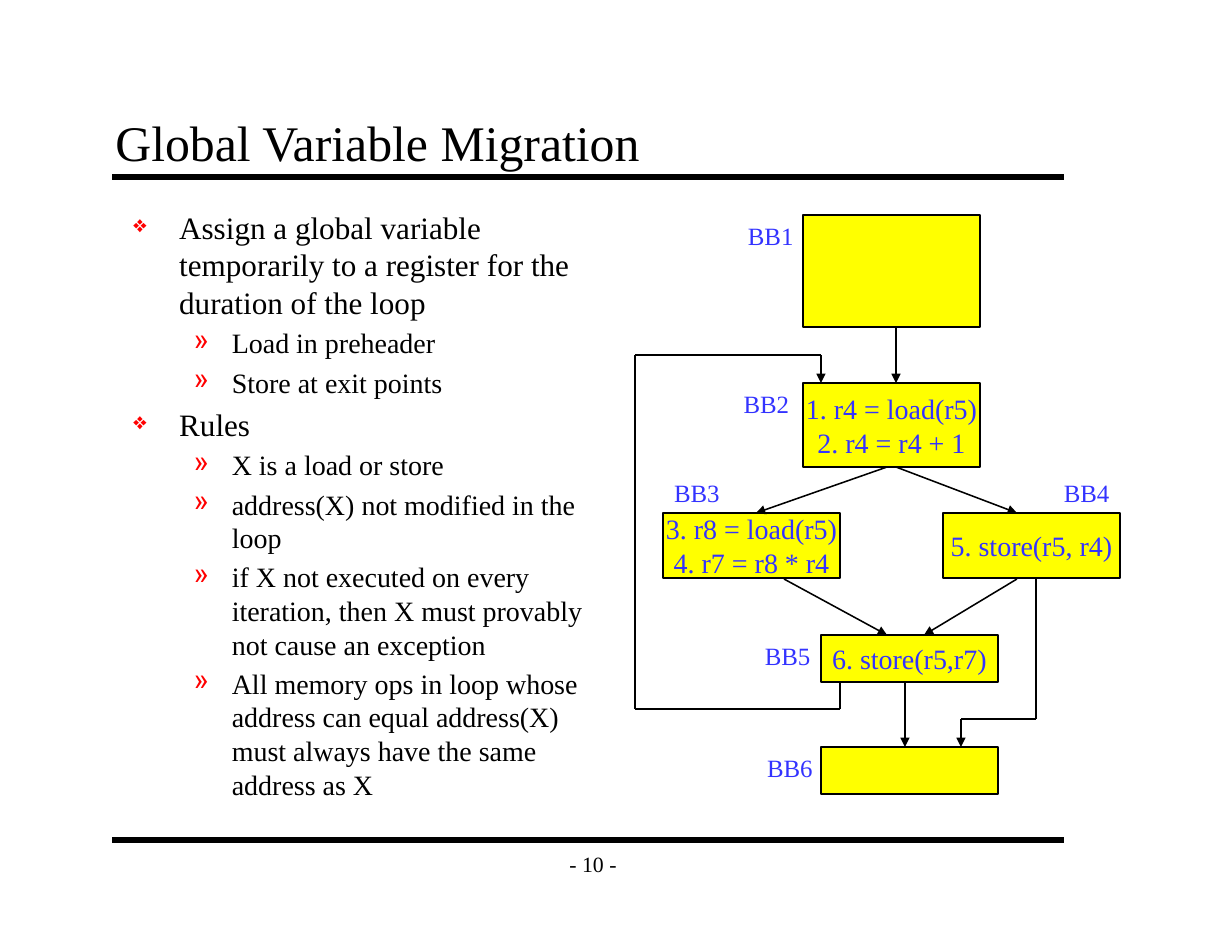
from dataclasses import dataclass
from itertools import pairwise

from lxml.etree import SubElement
from pptx import Presentation
from pptx.dml.color import RGBColor as RGB
from pptx.enum.shapes import MSO_CONNECTOR as LINE, MSO_SHAPE as SHAPE
from pptx.enum.text import MSO_ANCHOR as ANCHOR, PP_ALIGN as ALIGN
from pptx.oxml.ns import qn
from pptx.util import Inches, Pt


@dataclass(frozen=True)
class Theme:
    font: str = "Times New Roman"
    ink: RGB = RGB(0, 0, 0)
    blue: RGB = RGB(0x33, 0x33, 0xFF)
    red: str = "FF0000"
    yellow: RGB = RGB(0xFF, 0xFF, 0)
    title: int = 32
    body: int = 20
    sub: int = 18
    label: int = 16
    foot: int = 14
    rule: int = 4
    thin: int = 1


THEME = Theme()
PAD = (0.11, 0.06)

POINTS = [
    (0, "Assign a global variable temporarily to a register for the duration of the loop"),
    (1, "Load in preheader"),
    (1, "Store at exit points"),
    (0, "Rules"),
    (1, "X is a load or store"),
    (1, "address(X) not modified in the loop"),
    (1, "if X not executed on every iteration, then X must provably not cause an exception"),
    (1, "All memory ops in loop whose address can equal address(X) "
        "must always have the same address as X"),
]
# Per level: type size, left margin, hanging indent, bullet, bullet size in percent
LEVELS = [
    (THEME.body, 0.41, 0.41, "❖", 75),
    (THEME.sub, 0.88, 0.34, "»", 100),
]

# Places in the flow graph are relative to its top left corner.
BLOCK_W = 1.58
# Name, block left, top, height, label left, label top, code lines
BLOCKS = [
    ("BB1", 1.5, 0, 1, 0.91, 0, []),
    ("BB2", 1.5, 1.5, 0.75, 0.87, 1.5, ["1. r4 = load(r5)", "2. r4 = r4 + 1"]),
    ("BB3", 0.25, 2.66, 0.58, 0.25, 2.3, ["3. r8 = load(r5)", "4. r7 = r8 * r4"]),
    ("BB4", 2.75, 2.66, 0.58, 3.73, 2.3, ["5. store(r5, r4)"]),
    ("BB5", 1.66, 3.75, 0.42, 1.06, 3.75, ["6. store(r5,r7)"]),
    ("BB6", 1.66, 4.75, 0.42, 1.08, 4.75, []),
]
# Each path ends in an arrowhead.
PATHS = [
    [(2.33, 1), (2.33, 1.5)],
    [(2.25, 2.25), (1.08, 2.66)],
    [(2.33, 2.25), (3.41, 2.66)],
    [(1.33, 3.25), (2.25, 3.75)],
    [(3.41, 3.25), (2.58, 3.75)],
    [(2.41, 4.17), (2.41, 4.75)],
    [(1.83, 4.17), (1.83, 4.41), (0, 4.41), (0, 1.25), (1.66, 1.25), (1.66, 1.5)],
    [(3.58, 3.25), (3.58, 4.5), (2.91, 4.5), (2.91, 4.75)],
]


def write(para, text, size, color=THEME.ink, align=ALIGN.LEFT):
    para.alignment = align
    run = para.add_run()
    run.text = text
    font = run.font
    font.name, font.size, font.color.rgb = THEME.font, Pt(size), color


def add_text(slide, box, lines, size, color=THEME.ink, align=ALIGN.LEFT,
             anchor=ANCHOR.TOP, wrap=True, pad=PAD, shape=None):
    """Write lines into the given shape, or into a new text box."""
    shape = shape or slide.shapes.add_textbox(*map(Inches, box))
    frame = shape.text_frame
    frame.word_wrap, frame.vertical_anchor = wrap, anchor
    frame.margin_left = frame.margin_right = Inches(pad[0])
    frame.margin_top = frame.margin_bottom = Inches(pad[1])
    for i, line in enumerate(lines):
        para = frame.add_paragraph() if i else frame.paragraphs[0]
        write(para, line, size, color, align)
    return frame


def add_line(slide, start, end, width=THEME.thin, arrow=False):
    line = slide.shapes.add_connector(LINE.STRAIGHT, *map(Inches, (*start, *end)))
    line.line.color.rgb, line.line.width = THEME.ink, Pt(width)
    if arrow:
        SubElement(line.line._get_or_add_ln(), qn("a:tailEnd"), type="triangle")
    SubElement(line._element.spPr, qn("a:effectLst"))


def add_bullet(para, mark, left, hang, scale):
    props = para._p.get_or_add_pPr()
    props.set("marL", str(Inches(left)))
    props.set("indent", str(-Inches(hang)))
    SubElement(SubElement(props, qn("a:buClr")), qn("a:srgbClr"), val=THEME.red)
    SubElement(props, qn("a:buSzPct"), val=str(scale * 1000))
    SubElement(props, qn("a:buChar"), char=mark)


def add_frame(slide, left, top, width, height):
    """Draw the title, both rules and the page number."""
    right, base = left + width, top + height
    for y in (top, base):
        add_line(slide, (left, y), (right, y), THEME.rule)
    add_text(slide, (left - 0.08, top - 0.66, width, 0.67),
             ["Global Variable Migration"], THEME.title, anchor=ANCHOR.BOTTOM)
    add_text(slide, (left + 3.92, base, 0.75, 0.42), ["- 10 -"], THEME.foot,
             align=ALIGN.CENTER, anchor=ANCHOR.MIDDLE, wrap=False)


def add_points(slide, *box):
    frame = add_text(slide, box, [], THEME.body)
    for i, (level, text) in enumerate(POINTS):
        size, left, hang, mark, scale = LEVELS[level]
        para = frame.add_paragraph() if i else frame.paragraphs[0]
        para.level, para.space_before = level, Pt(size * 0.2)
        add_bullet(para, mark, left, hang, scale)
        write(para, text, size)


def add_block(slide, box, code):
    block = slide.shapes.add_shape(SHAPE.RECTANGLE, *map(Inches, box))
    block.shadow.inherit = False
    block.fill.solid()
    block.fill.fore_color.rgb = THEME.yellow
    block.line.color.rgb, block.line.width = THEME.ink, Pt(THEME.thin)
    if code:
        add_text(slide, box, code, THEME.sub, THEME.blue, ALIGN.CENTER,
                 ANCHOR.MIDDLE, wrap=False, shape=block)


def add_graph(slide, left, top):
    for name, x, y, high, tag_x, tag_y, code in BLOCKS:
        add_block(slide, (left + x, top + y, BLOCK_W, high), code)
        add_text(slide, (left + tag_x, top + tag_y, 0.61, 0.37), [name],
                 THEME.label, THEME.blue, wrap=False, pad=(0.1, 0.05))
    for path in PATHS:
        spots = [(left + x, top + y) for x, y in path]
        for start, end in pairwise(spots):
            add_line(slide, start, end, arrow=end == spots[-1])


def main():
    deck = Presentation()
    deck.slide_width, deck.slide_height = Inches(11), Inches(8.5)
    slide = deck.slides.add_slide(deck.slide_layouts[6])
    add_frame(slide, 1, 1.58, 8.5, 5.92)
    add_points(slide, 1.08, 1.8, 4.42, 5.7)
    add_graph(slide, 5.67, 1.92)
    deck.save("out.pptx")


if __name__ == "__main__":
    main()
